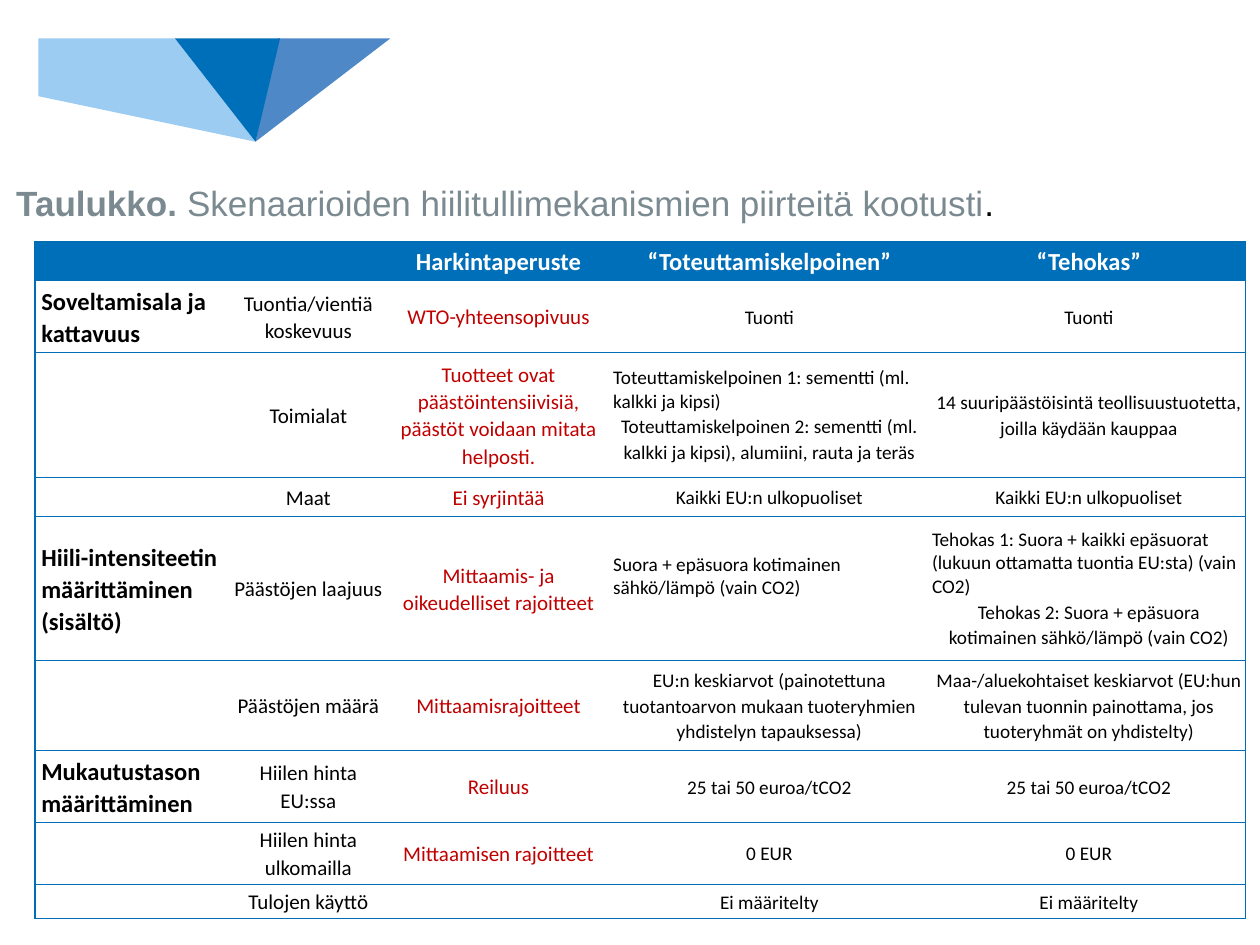
from lxml.etree import SubElement
from pptx import Presentation
from pptx.dml.color import RGBColor
from pptx.enum.text import MSO_ANCHOR, PP_ALIGN
from pptx.oxml.ns import qn
from pptx.util import Pt

WHITE = RGBColor(0xFF, 0xFF, 0xFF)
BLACK = RGBColor(0x00, 0x00, 0x00)
RED = RGBColor(0xC0, 0x00, 0x00)
GREY = RGBColor(0x7A, 0x8A, 0x90)
BLUE = RGBColor(0x00, 0x6F, 0xB9)
LIGHT_BLUE = RGBColor(0x9C, 0xCC, 0xF1)
MID_BLUE = RGBColor(0x4F, 0x88, 0xC7)
BORDER_BLUE = RGBColor(0x00, 0x6D, 0xB5)

# Points where the facets of the header ornament meet
TIP = (145.5, 80.9)
FACETS = [
    (MID_BLUE, [(223.4, 22.5), (158.6, 22.5), TIP]),
    (LIGHT_BLUE, [(22.5, 54.8), TIP, (99.5, 22.5), (22.5, 22.5)]),
    (BLUE, [(159.7, 22.5), (99.5, 22.5), TIP]),
]

COLUMN_WIDTHS = [109.4, 93.6, 123.8, 185.8, 179.3]
ROW_HEIGHTS = [21.7, 41.1, 71.4, 22.3, 82.3, 51.4, 41.1, 35.4, 19.4]
# Size, colour and bold of the body text in each column
COLUMN_STYLES = [(14, BLACK, True), (12, BLACK, False), (12, RED, False),
                 (11, BLACK, False), (11, BLACK, False)]
HEADER_STYLE = (14, WHITE, True)

# A line ending in a line break is set flush left
ROWS = [
    ["", "", "Harkintaperuste", "“Toteuttamiskelpoinen”", "“Tehokas”"],
    ["Soveltamisala ja kattavuus", "Tuontia/vientiä koskevuus",
     "WTO-yhteensopivuus", "Tuonti", "Tuonti"],
    ["", "Toimialat",
     "Tuotteet ovat päästöintensiivisiä, päästöt voidaan mitata helposti.",
     "Toteuttamiskelpoinen 1: sementti (ml. kalkki ja kipsi)\n"
     "Toteuttamiskelpoinen 2: sementti (ml. kalkki ja kipsi), alumiini, rauta ja teräs",
     "14 suuripäästöisintä teollisuustuotetta, joilla käydään kauppaa"],
    ["", "Maat", "Ei syrjintää", "Kaikki EU:n ulkopuoliset", "Kaikki EU:n ulkopuoliset"],
    ["Hiili-intensiteetin määrittäminen (sisältö)", "Päästöjen laajuus",
     "Mittaamis- ja oikeudelliset rajoitteet",
     "Suora + epäsuora kotimainen sähkö/lämpö (vain CO2)\n",
     "Tehokas 1: Suora + kaikki epäsuorat (lukuun ottamatta tuontia EU:sta) (vain CO2)\n"
     "Tehokas 2: Suora + epäsuora kotimainen sähkö/lämpö (vain CO2)"],
    ["", "Päästöjen määrä", "Mittaamisrajoitteet",
     "EU:n keskiarvot (painotettuna tuotantoarvon mukaan tuoteryhmien yhdistelyn tapauksessa)",
     "Maa-/aluekohtaiset keskiarvot (EU:hun tulevan tuonnin painottama, "
     "jos tuoteryhmät on yhdistelty)"],
    ["Mukautustason määrittäminen", "Hiilen hinta EU:ssa", "Reiluus",
     "25 tai 50 euroa/tCO2", "25 tai 50 euroa/tCO2"],
    ["", "Hiilen hinta ulkomailla", "Mittaamisen rajoitteet", "0 EUR", "0 EUR"],
    ["", "Tulojen käyttö", "", "Ei määritelty", "Ei määritelty"],
]


class SlideBuilder:
    def __init__(self, slide):
        self.slide = slide
        self.title_font = "Arial"
        self.table_font = "Calibri"
        self.border_width = Pt(0.75)

    def style_run(self, run, font_name, size, color, bold):
        run.font.name = font_name
        run.font.size = Pt(size)
        run.font.color.rgb = color
        run.font.bold = bold

    def facet(self, color, points):
        builder = self.slide.shapes.build_freeform(*points[0], scale=Pt(1))
        builder.add_line_segments(points[1:], close=True)
        shape = builder.convert_to_shape()
        shape.shadow.inherit = False
        shape.fill.solid()
        shape.fill.fore_color.rgb = color
        shape.line.fill.background()

    def title(self, left, top, width, height, parts):
        box = self.slide.shapes.add_textbox(Pt(left), Pt(top), Pt(width), Pt(height))
        box.text_frame.word_wrap = False
        paragraph = box.text_frame.paragraphs[0]
        for text, color, bold in parts:
            run = paragraph.add_run()
            run.text = text
            self.style_run(run, self.title_font, 20, color, bold)

    def table(self, left, top):
        frame = self.slide.shapes.add_table(
            len(ROWS), len(COLUMN_WIDTHS), Pt(left), Pt(top),
            Pt(sum(COLUMN_WIDTHS)), Pt(sum(ROW_HEIGHTS)))
        table = frame.table
        table.first_row = False
        table.horz_banding = False
        for column, width in zip(table.columns, COLUMN_WIDTHS):
            column.width = Pt(width)
        for row_index, texts in enumerate(ROWS):
            table.rows[row_index].height = Pt(ROW_HEIGHTS[row_index])
            for column_index, text in enumerate(texts):
                self.cell(table.cell(row_index, column_index), text, row_index, column_index)

    def cell(self, cell, text, row_index, column_index):
        is_header = row_index == 0
        is_last_column = column_index == len(COLUMN_WIDTHS) - 1
        side, edge = (0, 0) if is_last_column else (3.6, 2)
        cell.margin_left = cell.margin_right = Pt(side)
        cell.margin_top = cell.margin_bottom = Pt(edge)
        cell.vertical_anchor = MSO_ANCHOR.MIDDLE
        self.borders(cell, column_index == 0, is_last_column)
        if is_header:
            cell.fill.solid()
            cell.fill.fore_color.rgb = BLUE
        else:
            cell.fill.background()
        if text.endswith("\n"):
            cell.margin_bottom = Pt(edge + 14)

        style = HEADER_STYLE if is_header else COLUMN_STYLES[column_index]
        cell.text_frame.text = text.rstrip("\n")
        line_count = text.count("\n") + 1
        for index, paragraph in enumerate(cell.text_frame.paragraphs):
            if index < line_count - 1:
                paragraph.alignment = PP_ALIGN.LEFT
            else:
                paragraph.alignment = PP_ALIGN.CENTER if column_index else PP_ALIGN.LEFT
                paragraph.line_spacing = 1.07
                paragraph.space_after = Pt(8)
            for run in paragraph.runs:
                self.style_run(run, self.table_font, *style)
            if not text:
                SubElement(paragraph._p, qn("a:endParaRPr"), sz="1100")

    def borders(self, cell, left, right):
        """Rule every row, and the outer sides of the table only."""
        properties = cell._tc.get_or_add_tcPr()
        for tag, visible in (("a:lnL", left), ("a:lnR", right), ("a:lnT", True), ("a:lnB", True)):
            line = SubElement(properties, qn(tag), w=str(self.border_width))
            if visible:
                fill = SubElement(line, qn("a:solidFill"))
                SubElement(fill, qn("a:srgbClr"), val=str(BORDER_BLUE))
            else:
                SubElement(line, qn("a:noFill"))


def main():
    presentation = Presentation()
    presentation.slide_width = Pt(720)
    presentation.slide_height = Pt(540)
    builder = SlideBuilder(presentation.slides.add_slide(presentation.slide_layouts[6]))
    for color, points in FACETS:
        builder.facet(color, points)
    builder.table(20, 138.3)
    builder.title(2.2, 100.1, 573, 31.7, [
        ("Taulukko. ", GREY, True),
        ("Skenaarioiden hiilitullimekanismien piirteitä kootusti", GREY, False),
        (".", BLACK, False),
    ])
    presentation.save("out.pptx")


if __name__ == "__main__":
    main()
